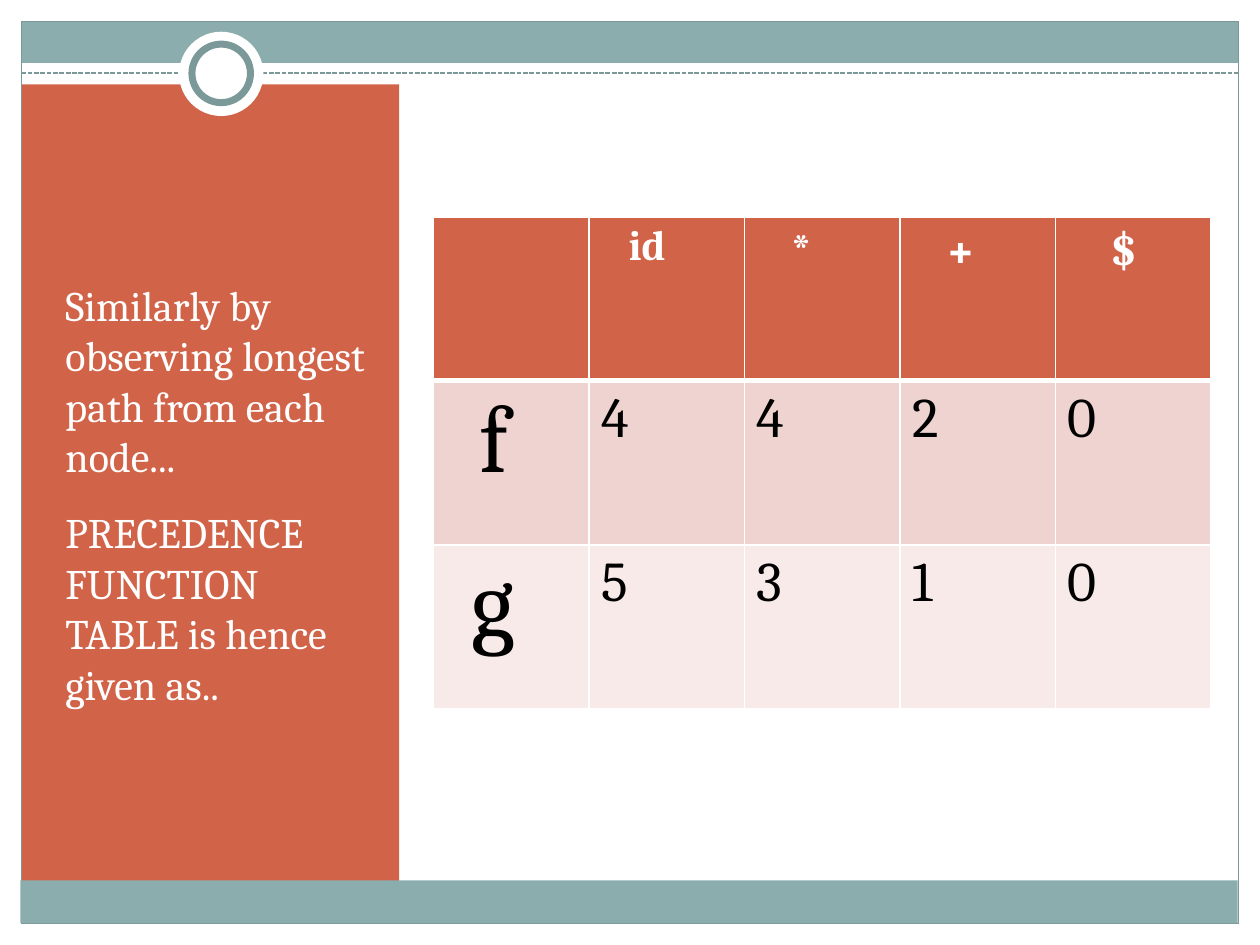
from lxml import etree
from pptx import Presentation
from pptx.dml.color import RGBColor
from pptx.enum.dml import MSO_LINE
from pptx.enum.shapes import MSO_CONNECTOR, MSO_SHAPE
from pptx.oxml.ns import qn
from pptx.util import Cm, Pt

RECTANGLE = MSO_SHAPE.RECTANGLE
OVAL = MSO_SHAPE.OVAL
STRAIGHT = MSO_CONNECTOR.STRAIGHT
SQUARE_DOT = MSO_LINE.SQUARE_DOT

FONT = "Cambria"
WHITE, BLACK = "FFFFFF", "000000"
TEAL, DARK_TEAL, ORANGE = "8CADAE", "7C999A", "D16349"
ROW_FILLS = [ORANGE, "EED3D0", "F7EAE9"]

INTRODUCTION = [
    "Similarly by observing longest path from each node...",
    "PRECEDENCE FUNCTION TABLE is hence given as..",
]
HEADERS = [("", 24, 0.25), ("id", 24, 0.8), ("*", 28, 0.93), ("+", 28, 0.93), ("$", 28, 1.1)]
FUNCTIONS = [("f", 0.93, "4420"), ("g", 0.77, "5310")]


def color(value):
    return RGBColor.from_string(value)


def style(paragraph, size, text_color, bold=False):
    font = paragraph.font
    font.name = FONT
    font.size = Pt(size)
    font.bold = bold
    font.color.rgb = color(text_color)


def add_shape(slide, kind, left, top, width, height, fill=None, line=None, line_width=0.75):
    shape = slide.shapes.add_shape(kind, Cm(left), Cm(top), Cm(width), Cm(height))
    shape.shadow.inherit = False
    if fill:
        shape.fill.solid()
        shape.fill.fore_color.rgb = color(fill)
    else:
        shape.fill.background()
    if line:
        shape.line.color.rgb = color(line)
        shape.line.width = Pt(line_width)
    else:
        shape.line.fill.background()


def add_dashed_line(slide, left, right, top):
    connector = slide.shapes.add_connector(STRAIGHT, Cm(left), Cm(top), Cm(right), Cm(top))
    connector.line.color.rgb = color(DARK_TEAL)
    connector.line.width = Pt(0.9)
    connector.line.dash_style = SQUARE_DOT
    etree.SubElement(connector._element.spPr, qn("a:effectLst"))


def add_frame(slide):
    add_shape(slide, RECTANGLE, 0.43, 0.43, 24.54, 0.84, TEAL)
    add_shape(slide, RECTANGLE, 0.43, 1.7, 7.62, 16.3, ORANGE)
    add_shape(slide, RECTANGLE, 0.43, 0.43, 24.54, 18.19, line=DARK_TEAL)
    add_dashed_line(slide, 0.43, 24.97, 1.47)
    add_shape(slide, OVAL, 3.61, 0.64, 1.7, 1.7, WHITE)
    add_shape(slide, OVAL, 3.87, 0.89, 1.18, 1.18, WHITE, DARK_TEAL, 4)
    add_shape(slide, RECTANGLE, 0.41, 17.75, 24.54, 0.86, TEAL)


def add_introduction(slide):
    frame = slide.shapes.add_textbox(Cm(1.07), Cm(5.51), Cm(6.55), Cm(11.5)).text_frame
    frame.word_wrap = True
    for index, text in enumerate(INTRODUCTION):
        paragraph = frame.add_paragraph() if index else frame.paragraphs[0]
        paragraph.text = text
        paragraph.space_before = Pt(4.8)
        paragraph.space_after = Pt(10)
        style(paragraph, 24, WHITE)


def set_borders(cell, bottom):
    properties = cell._tc.get_or_add_tcPr()
    for side, width in (("L", 1), ("R", 1), ("T", 1), ("B", bottom)):
        border = etree.SubElement(properties, qn(f"a:ln{side}"), w=str(Pt(width)))
        fill = etree.SubElement(border, qn("a:solidFill"))
        etree.SubElement(fill, qn("a:srgbClr"), val=WHITE)


def add_precedence_table(slide):
    rows = [HEADERS] + [
        [(name, 54, indent)] + [(value, 32, 0.25) for value in values]
        for name, indent, values in FUNCTIONS
    ]
    table = slide.shapes.add_table(
        len(rows), len(HEADERS), Cm(8.74), Cm(4.37), Cm(15.67), Cm(9.92)
    ).table
    for row_index, entries in enumerate(rows):
        is_header = row_index == 0
        for column_index, (text, size, indent) in enumerate(entries):
            cell = table.cell(row_index, column_index)
            set_borders(cell, 3 if is_header else 1)
            cell.fill.solid()
            cell.fill.fore_color.rgb = color(ROW_FILLS[row_index])
            cell.margin_left = Cm(indent)
            cell.text = text
            style(cell.text_frame.paragraphs[0], size, WHITE if is_header else BLACK, is_header)
    for cell in table.iter_cells():
        if cell._tc.row_idx == 1:
            cell._tc.tcPr.find(qn("a:lnT")).set("w", str(Pt(3)))


def main():
    presentation = Presentation()
    presentation.slide_width = Cm(25.4)
    presentation.slide_height = Cm(19.05)
    slide = presentation.slides.add_slide(presentation.slide_layouts[6])
    add_frame(slide)
    add_introduction(slide)
    add_precedence_table(slide)
    presentation.save("out.pptx")


if __name__ == "__main__":
    main()
